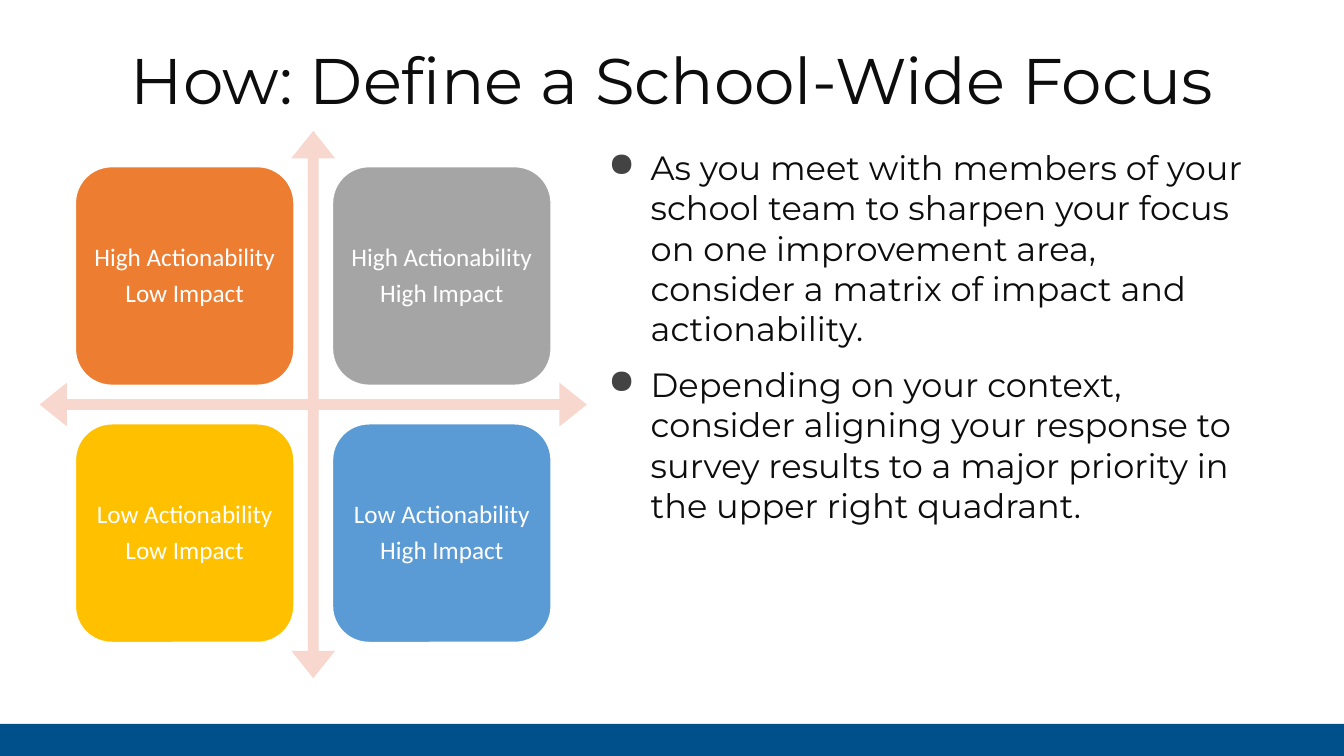
from dataclasses import dataclass

from lxml.etree import SubElement
from pptx import Presentation
from pptx.dml.color import RGBColor
from pptx.enum.shapes import MSO_SHAPE
from pptx.enum.text import MSO_ANCHOR, MSO_AUTO_SIZE, PP_ALIGN
from pptx.oxml.ns import qn
from pptx.util import Cm, Pt


@dataclass(frozen=True)
class Theme:
    ink: str = "0D0D0D"
    white: str = "FFFFFF"
    bullet: str = "434343"
    axes: str = "F8D7CE"
    footer: str = "00518B"
    orange: str = "ED7D31"
    gray: str = "A5A5A5"
    gold: str = "FFC000"
    blue: str = "5B9BD5"
    main_font: str = "Montserrat"
    label_font: str = "Calibri"
    title_size: int = 46
    body_size: int = 24
    label_size: int = 18


theme = Theme()


def add_run(paragraph, text, font_name, size, color):
    run = paragraph.add_run()
    run.text = text
    run.font.name = font_name
    run.font.size = Pt(size)
    run.font.color.rgb = RGBColor.from_string(color)


def add_filled(shape_type, left, top, width, height, color):
    """Add a flat shape without outline; lengths are in centimetres."""
    shape = slide.shapes.add_shape(shape_type, Cm(left), Cm(top), Cm(width), Cm(height))
    shape.shadow.inherit = False
    shape.fill.solid()
    shape.fill.fore_color.rgb = RGBColor.from_string(color)
    shape.line.fill.background()
    return shape


prs = Presentation()
prs.slide_width, prs.slide_height = Cm(33.87), Cm(19.05)
slide = prs.slides.add_slide(prs.slide_layouts[5])

# Title
title = slide.shapes.title
title.left, title.top, title.width, title.height = Cm(2.23), Cm(0.86), Cm(29.41), Cm(2.24)
title.text_frame.auto_size = MSO_AUTO_SIZE.NONE
title.text_frame.vertical_anchor = MSO_ANCHOR.MIDDLE
heading = title.text_frame.paragraphs[0]
heading.alignment = PP_ALIGN.CENTER
add_run(heading, "How: Define a School-Wide Focus", theme.main_font, theme.title_size, theme.ink)

# Impact and actionability matrix
axes = add_filled(MSO_SHAPE.QUAD_ARROW, 1, 3.3, 13.79, 13.79, theme.axes)
for index, proportion in enumerate((0.02, 0.04, 0.05)):
    axes.adjustments[index] = proportion

QUADRANT_SIZE, QUADRANT_STEP = 5.51, 6.48
quadrant_colors = ((theme.orange, theme.gray), (theme.gold, theme.blue))
for row, actionability in enumerate(("High", "Low")):
    for column, impact in enumerate(("Low", "High")):
        quadrant = add_filled(
            MSO_SHAPE.ROUNDED_RECTANGLE,
            1.9 + column * QUADRANT_STEP, 4.2 + row * QUADRANT_STEP,
            QUADRANT_SIZE, QUADRANT_SIZE, quadrant_colors[row][column])
        quadrant.line.color.rgb = RGBColor.from_string(theme.white)
        quadrant.line.width = Pt(1)
        label = quadrant.text_frame
        label.word_wrap = True
        label.vertical_anchor = MSO_ANCHOR.MIDDLE
        label.margin_left = label.margin_right = Cm(0.18)
        label.margin_top = label.margin_bottom = Cm(0.18)
        for number, words in enumerate((f"{actionability} Actionability", f"{impact} Impact")):
            line = label.add_paragraph() if number else label.paragraphs[0]
            line.alignment = PP_ALIGN.CENTER
            line.line_spacing = 0.9
            line.space_after = Pt(6.3)
            add_run(line, words, theme.label_font, theme.label_size, theme.white)

# Guidance
guidance = slide.shapes.add_textbox(Cm(14.88), Cm(3.45), Cm(16.76), Cm(9.14)).text_frame
guidance.word_wrap = True
guidance.margin_left = guidance.margin_right = Cm(0.25)
guidance.margin_top = guidance.margin_bottom = Cm(0.25)
advice = (
    "As you meet with members of your school team to sharpen your focus on one "
    "improvement area, consider a matrix of impact and actionability.",
    "Depending on your context, consider aligning your response to survey results "
    "to a major priority in the upper right quadrant.",
)
for number, sentence in enumerate(advice):
    point = guidance.add_paragraph() if number else guidance.paragraphs[0]
    point.space_before = Pt(10 if number else 0)
    point.space_after = Pt(1)
    properties = point._p.get_or_add_pPr()
    properties.set("marL", str(Cm(1.27)))
    properties.set("indent", str(Cm(-1.07)))
    bullet_color = SubElement(properties, qn("a:buClr"))
    SubElement(bullet_color, qn("a:srgbClr"), val=theme.bullet)
    SubElement(properties, qn("a:buChar"), char="●")
    add_run(point, sentence, theme.main_font, theme.body_size, theme.ink)

# Footer band
add_filled(MSO_SHAPE.RECTANGLE, 0, 18.24, 33.87, 0.81, theme.footer)

prs.save("out.pptx")
